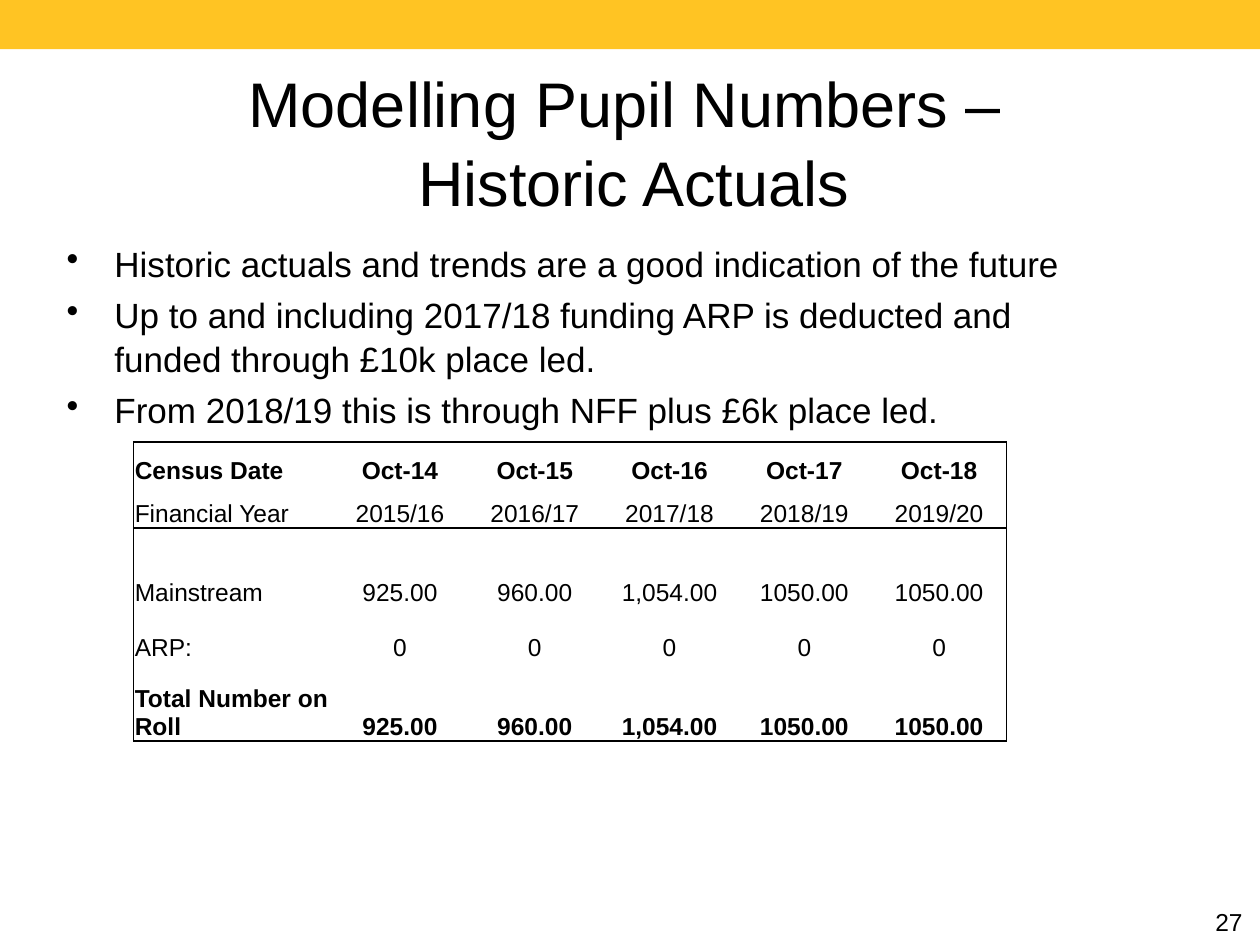
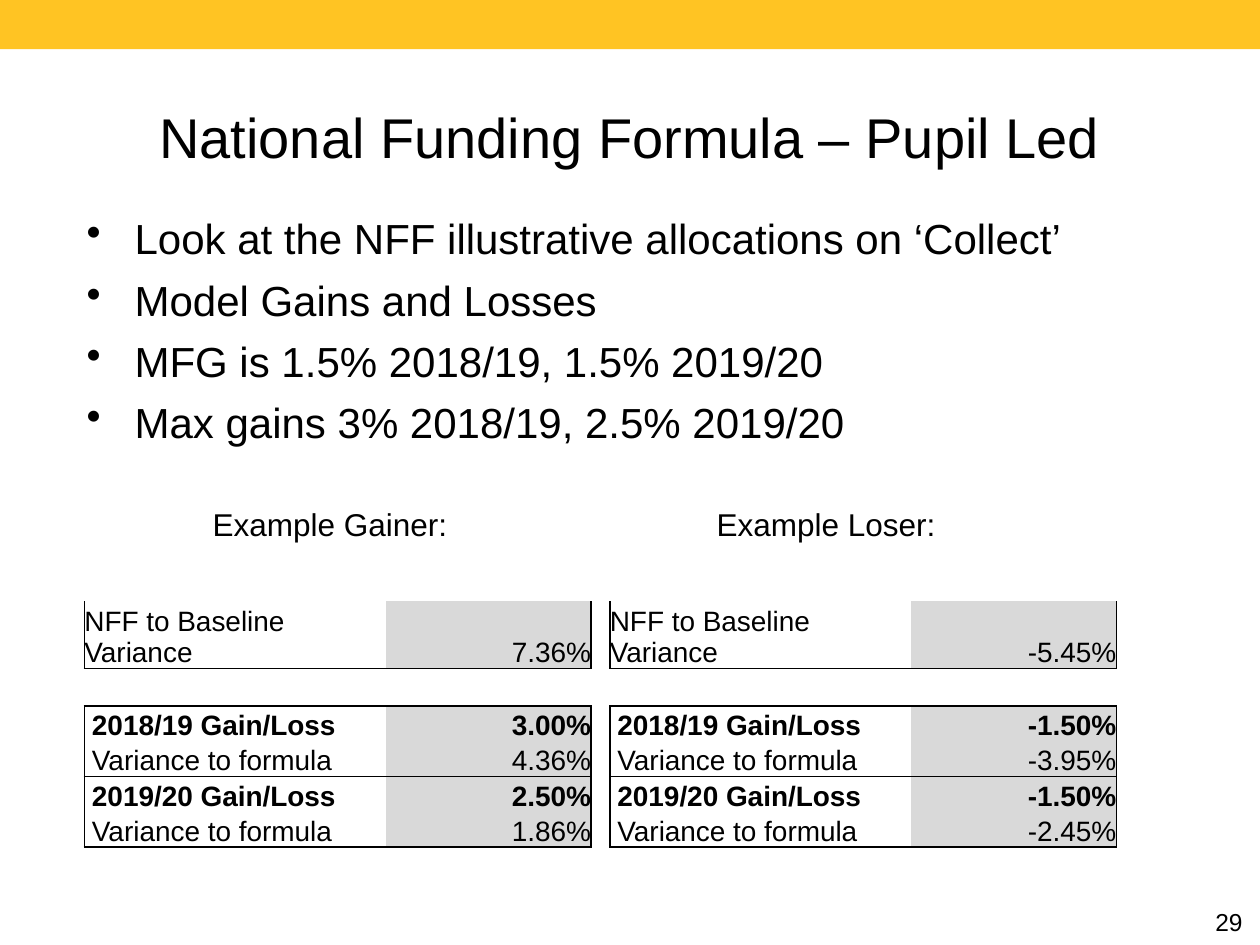
from lxml.etree import SubElement
from pptx import Presentation
from pptx.dml.color import RGBColor
from pptx.enum.shapes import MSO_SHAPE
from pptx.enum.text import MSO_ANCHOR, PP_ALIGN
from pptx.oxml.ns import qn
from pptx.util import Inches, Pt

BLACK, AMBER, GREY = "000000", "FFC423", "D9D9D9"
HANGING = 0.38
LINE_SPACING = 1.05


def colour(value):
    return RGBColor.from_string(value)


def apply(target, **values):
    for name, value in values.items():
        setattr(target, name, value)


def inches(*lengths):
    return [Inches(length) for length in lengths]


class Deck:
    font = "Arial"

    def __init__(self):
        self.presentation = Presentation()
        apply(self.presentation, slide_width=Inches(10), slide_height=Inches(7.5))
        self.slide = None

    def start_slide(self, title, title_box, title_size, number):
        self.slide = self.presentation.slides.add_slide(self.presentation.slide_layouts[6])
        self.band()
        heading = self.text_frame(title_box, MSO_ANCHOR.MIDDLE).paragraphs[0]
        self.set_text(heading, title, title_size, alignment=PP_ALIGN.CENTER,
                      line_spacing=LINE_SPACING)
        page = self.text_frame((7.88, 7.15, 2.08, 0.31)).paragraphs[0]
        self.set_text(page, number, 14, alignment=PP_ALIGN.RIGHT)

    def band(self):
        band = self.slide.shapes.add_shape(MSO_SHAPE.RECTANGLE, *inches(0, 0, 10, 0.39))
        band.shadow.inherit = False
        band.fill.solid()
        band.fill.fore_color.rgb = colour(AMBER)
        band.line.fill.background()

    def text_frame(self, box, anchor=MSO_ANCHOR.TOP):
        frame = self.slide.shapes.add_textbox(*inches(*box)).text_frame
        apply(frame, word_wrap=True, vertical_anchor=anchor)
        return frame

    def set_text(self, paragraph, text, size, bold=False, **layout):
        paragraph.text = text
        apply(paragraph, **layout)
        for run in paragraph.runs:
            apply(run.font, name=self.font, size=Pt(size), bold=bold)
            run.font.color.rgb = colour(BLACK)

    def bullets(self, box, points, size):
        frame = self.text_frame(box)
        for index, point in enumerate(points):
            paragraph = frame.add_paragraph() if index else frame.paragraphs[0]
            properties = paragraph._p.get_or_add_pPr()
            properties.set("marL", str(Inches(HANGING)))
            properties.set("indent", str(-Inches(HANGING)))
            SubElement(properties, qn("a:buChar"), char="•")
            self.set_text(paragraph, point, size, line_spacing=LINE_SPACING,
                          space_before=Pt(size * 0.2 if index else 0))
        return frame

    def tabbed_line(self, frame, labels, stops, size, space_before):
        paragraph = frame.add_paragraph()
        tabs = SubElement(paragraph._p.get_or_add_pPr(), qn("a:tabLst"))
        for stop in stops:
            SubElement(tabs, qn("a:tab"), pos=str(Inches(stop)), algn="l")
        self.set_text(paragraph, "".join("\t" + label for label in labels), size,
                      line_spacing=LINE_SPACING, space_before=Pt(space_before))

    def borders(self, cell, **drawn):
        properties = cell._tc.get_or_add_tcPr()
        for side, visible in drawn.items():
            edge = SubElement(properties, qn("a:ln" + side), w=str(Pt(1)))
            if visible:
                fill = SubElement(edge, qn("a:solidFill"))
                SubElement(fill, qn("a:srgbClr"), val=BLACK)
            else:
                SubElement(edge, qn("a:noFill"))

    def table(self, origin, widths, heights, rows, size, rules, bold_rows,
              value_align, inset=0, indented_rows=(), value_fill=None):
        frame = self.slide.shapes.add_table(
            len(rows), len(widths), *inches(*origin, sum(widths), sum(heights)))
        grid = frame.table
        apply(grid, first_row=False, horz_banding=False)
        for column, width in zip(grid.columns, widths):
            column.width = Inches(width)
        for row, height in zip(grid.rows, heights):
            row.height = Inches(height)
        for r, values in enumerate(rows):
            for c in range(len(widths)):
                cell = grid.cell(r, c)
                left = 0.06 if c == 0 and r in indented_rows else inset
                apply(cell, vertical_anchor=MSO_ANCHOR.BOTTOM, margin_left=Inches(left),
                      margin_right=Inches(inset), margin_top=Inches(inset), margin_bottom=0)
                self.borders(cell, L=bool(values) and c == 0,
                             R=bool(values) and c == len(widths) - 1,
                             T=r in rules, B=r + 1 in rules)
                if value_fill and values and c:
                    cell.fill.solid()
                    cell.fill.fore_color.rgb = colour(value_fill)
                else:
                    cell.fill.background()
                if values:
                    self.set_text(cell.text_frame.paragraphs[0], values[c], size,
                                  bold=r in bold_rows,
                                  alignment=value_align if c else PP_ALIGN.LEFT)


def pupil_numbers(deck):
    deck.start_slide("Modelling Pupil Numbers –\v Historic Actuals",
                     (0.75, 0.67, 8.42, 0.88), 36, "27")
    roll = ["925.00", "960.00", "1,054.00", "1050.00", "1050.00"]
    census = [
        ["Census Date"] + [f"Oct-{year}" for year in range(14, 19)],
        ["Financial Year"] + [f"20{year}/{year + 1}" for year in range(15, 20)],
        ["Mainstream"] + roll,
        ["ARP:"] + ["0"] * 5,
        ["Total Number on Roll"] + roll,
    ]
    deck.table((1.06, 3.51), [1.58] + [1.07] * 5, [0.34, 0.34, 0.63, 0.43, 0.63],
               census, 14, rules={0, 2, 5}, bold_rows={0, 4},
               value_align=PP_ALIGN.CENTER, inset=0.01)
    deck.bullets((0.43, 1.86, 8.5, 0.56), [
        "Historic actuals and trends are a good indication of the future",
        "Up to and including 2017/18 funding ARP is deducted and funded through £10k place led.",
        "From 2018/19 this is through NFF plus £6k place led.",
    ], 20)


def funding_formula(deck):
    deck.start_slide("National Funding Formula – Pupil Led",
                     (0.75, 0.44, 8.5, 1.25), 32, "29")
    points = deck.bullets((0.59, 1.62, 8.5, 2.52), [
        "Look at the NFF illustrative allocations on ‘Collect’",
        "Model Gains and Losses",
        "MFG is 1.5% 2018/19, 1.5% 2019/20",
        "Max gains 3% 2018/19, 2.5% 2019/20",
    ], 24)
    deck.tabbed_line(points, ["Example Gainer:", "Example Loser:"], [1, 5], 18, 32)
    examples = {
        0.67: ["7.36%", "3.00%", "4.36%", "2.50%", "1.86%"],
        4.84: ["-5.45%", "-1.50%", "-3.95%", "-1.50%", "-2.45%"],
    }
    labels = ["NFF to Baseline Variance", "2018/19 Gain/Loss", "Variance to formula",
              "2019/20 Gain/Loss", "Variance to formula"]
    for left, percentages in examples.items():
        variances = list(zip(labels, percentages))
        variances.insert(1, None)
        deck.table((left, 4.77), [2.39, 1.63], [0.49] + [0.28] * 5, variances, 16,
                   rules={1, 2, 4, 6}, bold_rows={2, 4}, value_align=PP_ALIGN.RIGHT,
                   indented_rows=range(2, 6), value_fill=GREY)


def main():
    deck = Deck()
    pupil_numbers(deck)
    funding_formula(deck)
    deck.presentation.save("out.pptx")


if __name__ == "__main__":
    main()
